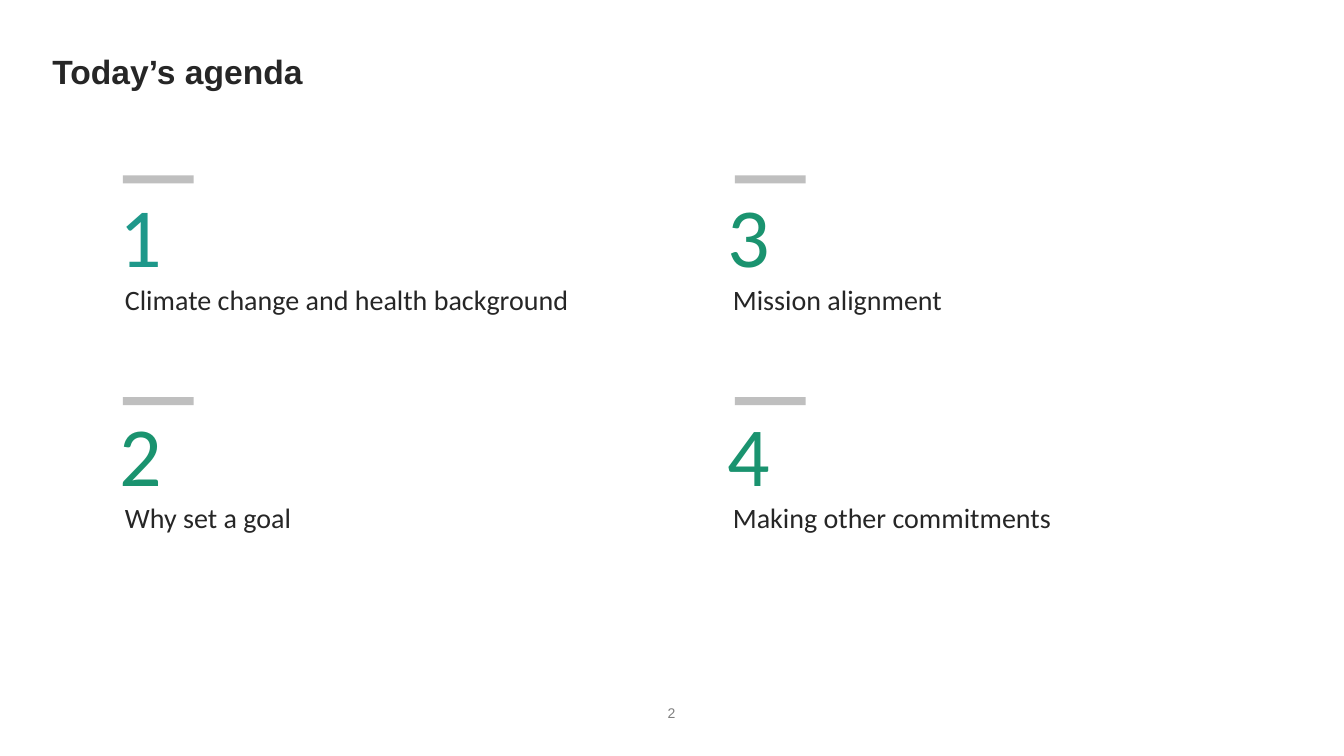
from pptx import Presentation
from pptx.dml.color import RGBColor
from pptx.enum import shapes, text
from pptx.util import Inches, Pt

INK, GREEN, TEAL = "262626", "1A936F", "1E988A"


def paint(fill, tone):
    fill.solid()
    fill.fore_color.rgb = RGBColor.from_string(tone)


def write(box, place, words, size, font, tone, bold=False):
    """Place a text shape and give it one left-aligned, top-anchored run."""
    box.left, box.top, box.width, box.height = map(Inches, place)
    frame = box.text_frame
    frame.word_wrap = True
    frame.auto_size = text.MSO_AUTO_SIZE.NONE
    frame.vertical_anchor = text.MSO_ANCHOR.TOP
    para = frame.paragraphs[0]
    para.alignment = text.PP_ALIGN.LEFT
    run = para.add_run()
    run.text = words
    run.font.size, run.font.name, run.font.bold = Pt(size), font, bold
    paint(run.font.fill, tone)
    return frame


deck = Presentation()
deck.slide_width, deck.slide_height = Inches(13.33), Inches(7.5)
slide = deck.slides.add_slide(deck.slide_layouts[5])
items = slide.shapes

title = write(items.title, (0.42, 0.5, 12.5, 0.92), "Today’s agenda", 24, "Arial", INK, True)
title.paragraphs[0].line_spacing = 0.9

# Agenda runs down the left column, then down the right one
topics = ["Climate change and health background", "Why set a goal",
          "Mission alignment", "Making other commitments"]
for i, topic in enumerate(topics):
    col, row = divmod(i, 2)
    x, y = 6.03 * col, 2.17 * row
    label = items.add_textbox(0, 0, 0, 0)
    write(label, (1.14 + x, 2.75 + y, 4.67, 1.19), topic, 20, "Calibri", INK)
    digit = items.add_textbox(0, 0, 0, 0)
    tone = TEAL if i == 0 else GREEN
    write(digit, (1.09 + x, 1.77 + y, 1.26, 0.83), str(i + 1), 60, "Calibri", tone)
    bar = items.add_shape(shapes.MSO_SHAPE.RECTANGLE, Inches(1.22 + 6.07 * col),
                          Inches(1.74 + 2.2 * row), Inches(0.7), Inches(0.08))
    bar.shadow.inherit = False
    paint(bar.fill, "BFBFBF")
    bar.line.fill.background()

page = write(items.add_textbox(0, 0, 0, 0), (6, 6.94, 1.32, 0.27), "2", 10, "Arial", "7F7F7F")
page.vertical_anchor = text.MSO_ANCHOR.MIDDLE
page.paragraphs[0].alignment = text.PP_ALIGN.CENTER

deck.save("out.pptx")
